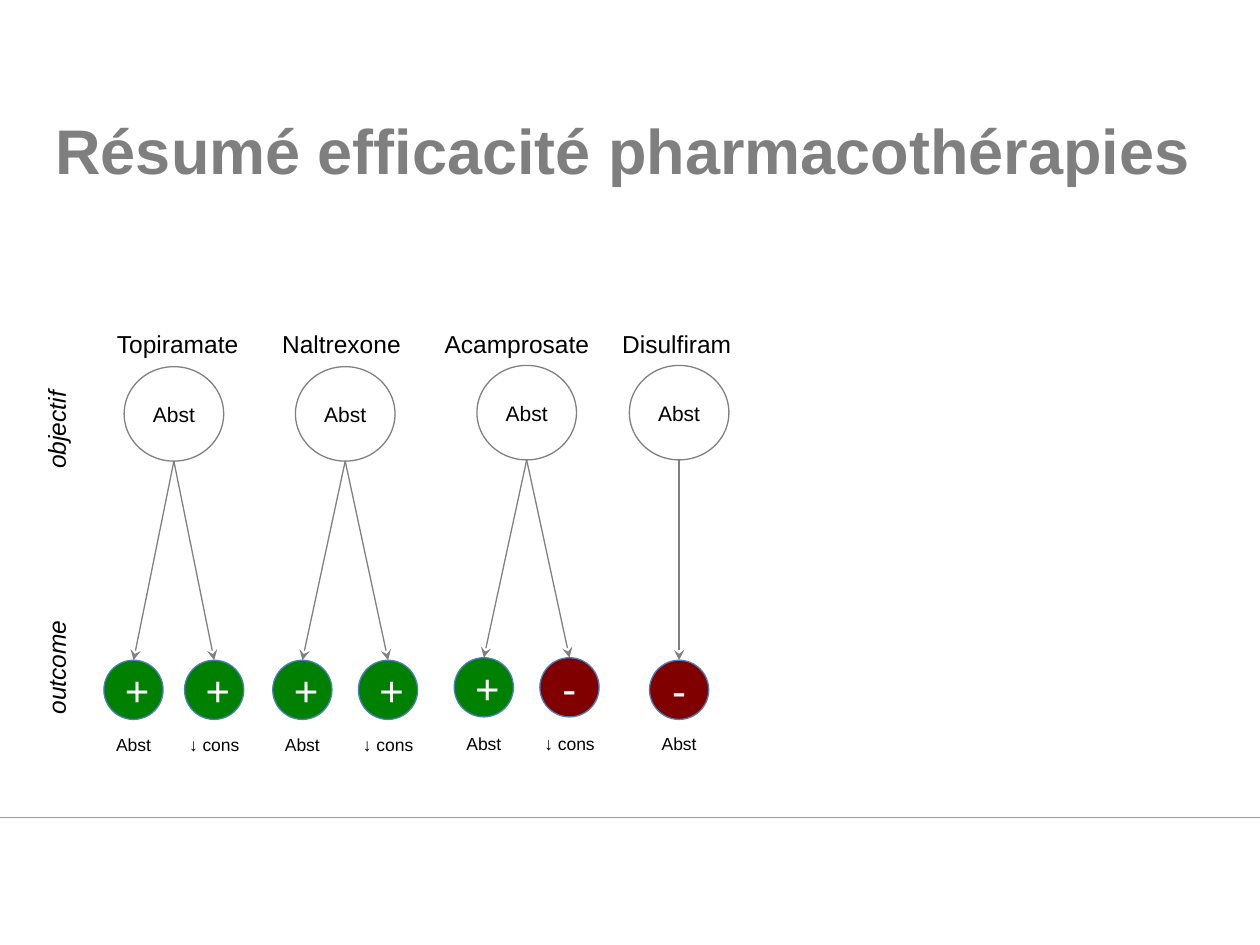
from lxml import etree
from pptx import Presentation
from pptx.dml.color import RGBColor
from pptx.enum.shapes import MSO_CONNECTOR, MSO_SHAPE
from pptx.enum.text import MSO_ANCHOR, PP_ALIGN
from pptx.oxml.ns import qn
from pptx.util import Inches, Pt

GREY, GREEN, RED = "808080", "008000", "800000"
BLACK, WHITE, BLUE = "000000", "FFFFFF", "4B7EBC"
BIG, SMALL = (0.79, 0.75), (0.47, 0.47)
CAPTIONS = [("Abst", 0.63), ("↓ cons", 1.0)]

# name, heading left, heading width, centre, objective top, outcome top, spread, signs
DRUGS = [
    ("Topiramate", 0.83, 1.17, 1.38, 2.91, 5.24, 0.32, "++"),
    ("Naltrexone", 2.14, 1.15, 2.74, 2.91, 5.24, 0.34, "++"),
    ("Acamprosate", 3.43, 1.36, 4.18, 2.9, 5.22, 0.34, "+-"),
    ("Disulfiram", 4.84, 1.07, 5.39, 2.9, 5.24, 0, "-"),
]


def rgb(value):
    return RGBColor.from_string(value)


def write(tf, text, size, color=BLACK, align=PP_ALIGN.CENTER, bold=False, italic=False):
    tf.text = text
    p = tf.paragraphs[0]
    p.alignment = align
    font = p.runs[0].font
    font.name, font.size = "Arial", Pt(size)
    font.bold, font.italic = bold, italic
    font.color.rgb = rgb(color)


def add_text(s, box, text, size, wrap=True, vertical=False, **style):
    tf = s.shapes.add_textbox(*map(Inches, box)).text_frame
    tf.word_wrap = wrap
    if vertical:
        tf._txBody.bodyPr.set("vert", "vert270")
    write(tf, text, size, **style)


def add_circle(s, center, top, size, text, points, fill, line, color):
    width, height = size
    box = (center - width / 2, top, width, height)
    sp = s.shapes.add_shape(MSO_SHAPE.OVAL, *map(Inches, box))
    sp.shadow.inherit = False
    sp.fill.solid()
    sp.fill.fore_color.rgb = rgb(fill)
    sp.line.color.rgb = rgb(line)
    sp.line.width = Pt(0.75)
    sp.text_frame.vertical_anchor = MSO_ANCHOR.MIDDLE
    write(sp.text_frame, text, points, color)


def add_line(s, start, end, color=GREY, arrow=False):
    line = s.shapes.add_connector(MSO_CONNECTOR.STRAIGHT, *map(Inches, start + end))
    line.line.color.rgb = rgb(color)
    line.line.width = Pt(0.75)
    if arrow:
        etree.SubElement(line.line._get_or_add_ln(), qn("a:tailEnd"), type="stealth")
    etree.SubElement(line._element.spPr, qn("a:effectLst"))


def add_title(s, box, text):
    title = s.shapes.title
    title.left, title.top, title.width, title.height = map(Inches, box)
    tf = title.text_frame
    tf.margin_left = tf.margin_right = tf.margin_top = tf.margin_bottom = 0
    tf.vertical_anchor = MSO_ANCHOR.MIDDLE
    tf.word_wrap = True
    write(tf, text, 36, "7F7F7F", PP_ALIGN.LEFT, bold=True)


def add_drug(s, name, left, width, center, top, outcome_top, spread, signs):
    add_text(s, (left, 2.56, width, 0.34), name, 14, wrap=False, align=PP_ALIGN.LEFT)
    add_circle(s, center, top, BIG, "Abst", 12, WHITE, GREY, BLACK)
    for i, (sign, (caption, caption_width)) in enumerate(zip(signs, CAPTIONS)):
        x = center + (2 * i - 1) * spread
        fill = GREEN if sign == "+" else RED
        add_circle(s, x, outcome_top, SMALL, sign, 24, fill, BLUE, WHITE)
        add_line(s, (center, top + BIG[1]), (x, outcome_top), arrow=True)
        caption_box = (x - caption_width / 2, top + 2.87, caption_width, 0.27)
        add_text(s, caption_box, caption, 10)


def main():
    prs = Presentation()
    prs.slide_width, prs.slide_height = Inches(10), Inches(7.5)
    s = prs.slides.add_slide(prs.slide_layouts[5])
    add_title(s, (0.44, 0.56, 9.25, 1.25), "Résumé efficacité pharmacothérapies")
    add_line(s, (0, 6.49), (10, 6.49), "9B9B9B")
    for label, top, height in (("objectif", 3.05, 0.77), ("outcome", 4.87, 0.9)):
        add_text(s, (0.28, top, 0.44, height), label, 14, wrap=False, vertical=True,
                 align=PP_ALIGN.LEFT, italic=True)
    for drug in DRUGS:
        add_drug(s, *drug)
    prs.save("out.pptx")


if __name__ == "__main__":
    main()
